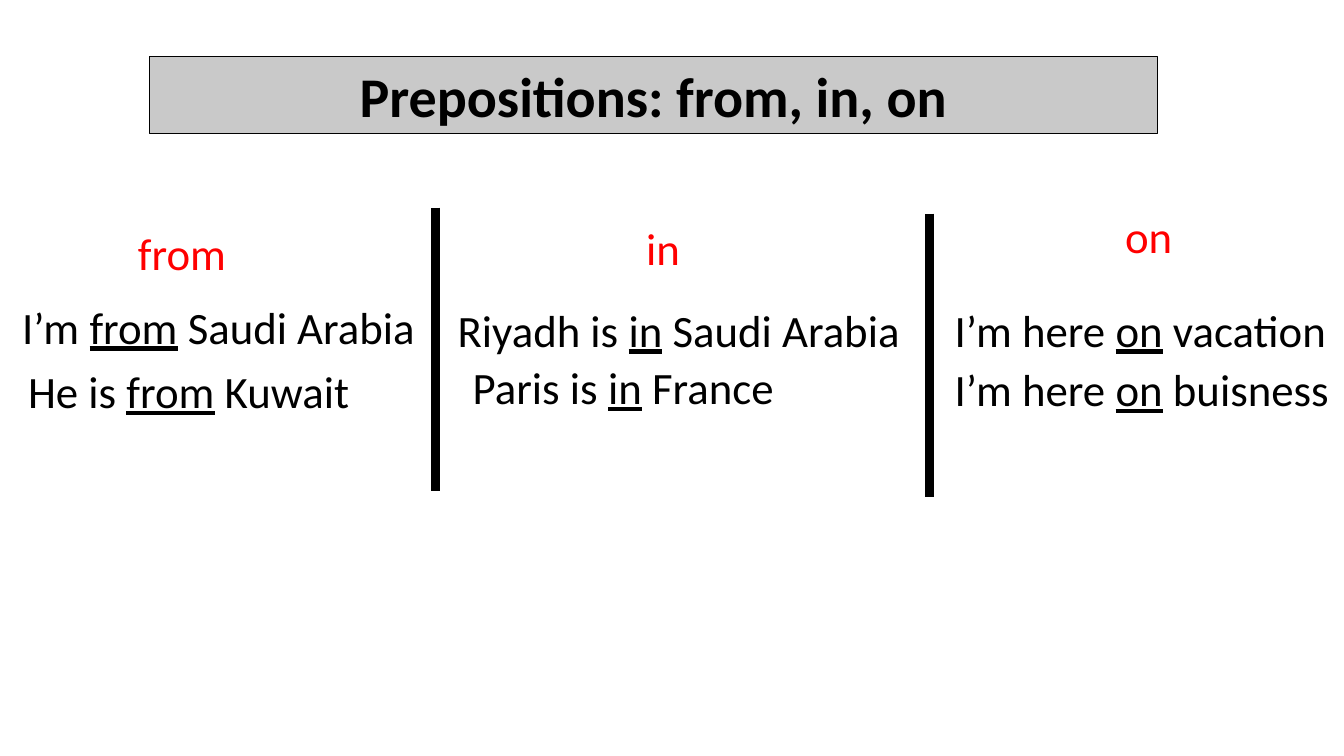
from pptx import Presentation
from pptx.dml.color import RGBColor
from pptx.enum import shapes, text
from pptx.oxml.ns import qn
from pptx.util import Inches, Pt
from lxml import etree

BLACK = RGBColor(0x00, 0x00, 0x00)
RED = RGBColor(0xFF, 0x00, 0x00)
GREY = RGBColor(0xC9, 0xC9, 0xC9)

HEADINGS = [("from", 1.27, 2.19), ("in", 6.31, 2.14), ("on", 11.06, 2.02)]
EXAMPLES = [
    ("I’m ", "from", " Saudi Arabia", 0.12, 2.92),
    ("He is ", "from", " Kuwait", 0.18, 3.56),
    ("Riyadh is ", "in", " Saudi Arabia", 4.44, 2.95),
    ("Paris is ", "in", " France", 4.59, 3.52),
    ("I’m here ", "on", " vacation", 9.37, 2.95),
    ("I’m here ", "on", " buisness", 9.37, 3.54),
]
DIVIDERS = [(4.32, 2.06), (9.22, 2.12)]


def style(paragraph, size, color):
    """Set the font of a paragraph."""
    paragraph.font.name = "Calibri"
    paragraph.font.size = Pt(size)
    paragraph.font.color.rgb = color


def add_title(slide, wording):
    """Add the grey title bar."""
    bar = slide.shapes.add_shape(
        shapes.MSO_SHAPE.RECTANGLE, Inches(1.48), Inches(0.56), Inches(10), Inches(0.77))
    bar.shadow.inherit = False
    bar.fill.solid()
    bar.fill.fore_color.rgb = GREY
    bar.line.color.rgb = BLACK
    bar.line.width = Pt(0.75)
    title = bar.text_frame.paragraphs[0]
    title.text = wording
    title.alignment = text.PP_ALIGN.CENTER
    title.font.bold = True
    style(title, 40, BLACK)


def add_phrase(slide, left, top, width, color):
    """Add a one-line text box and return its paragraph."""
    box = slide.shapes.add_textbox(Inches(left), Inches(top), Inches(width), Inches(0.64))
    box.text_frame.word_wrap = True
    phrase = box.text_frame.paragraphs[0]
    phrase.alignment = text.PP_ALIGN.LEFT
    style(phrase, 32, color)
    return phrase


def add_heading(slide, preposition, left, top):
    """Add a red column heading."""
    add_phrase(slide, left, top, 1.76, RED).add_run().text = preposition


def add_example(slide, before, preposition, after, left, top):
    """Add a sentence with its preposition underlined."""
    sentence = add_phrase(slide, left, top, 4.62, BLACK)
    for part in (before, preposition, after):
        run = sentence.add_run()
        run.text = part
        if part == preposition:
            run.font.underline = True


def add_divider(slide, x, top):
    """Add a thick vertical line between columns."""
    divider = slide.shapes.add_connector(
        shapes.MSO_CONNECTOR.STRAIGHT, Inches(x), Inches(top), Inches(x), Inches(top + 2.81))
    divider.line.color.rgb = BLACK
    divider.line.width = Pt(6)
    etree.SubElement(divider._element.spPr, qn("a:effectLst"))


def main():
    """Build the prepositions slide."""
    deck = Presentation()
    deck.slide_width, deck.slide_height = Inches(13.33), Inches(7.5)
    slide = deck.slides.add_slide(deck.slide_layouts[6])
    add_title(slide, "Prepositions: from, in, on")
    for heading in HEADINGS:
        add_heading(slide, *heading)
    for example in EXAMPLES:
        add_example(slide, *example)
    for divider in DIVIDERS:
        add_divider(slide, *divider)
    deck.save("out.pptx")


if __name__ == "__main__":
    main()
